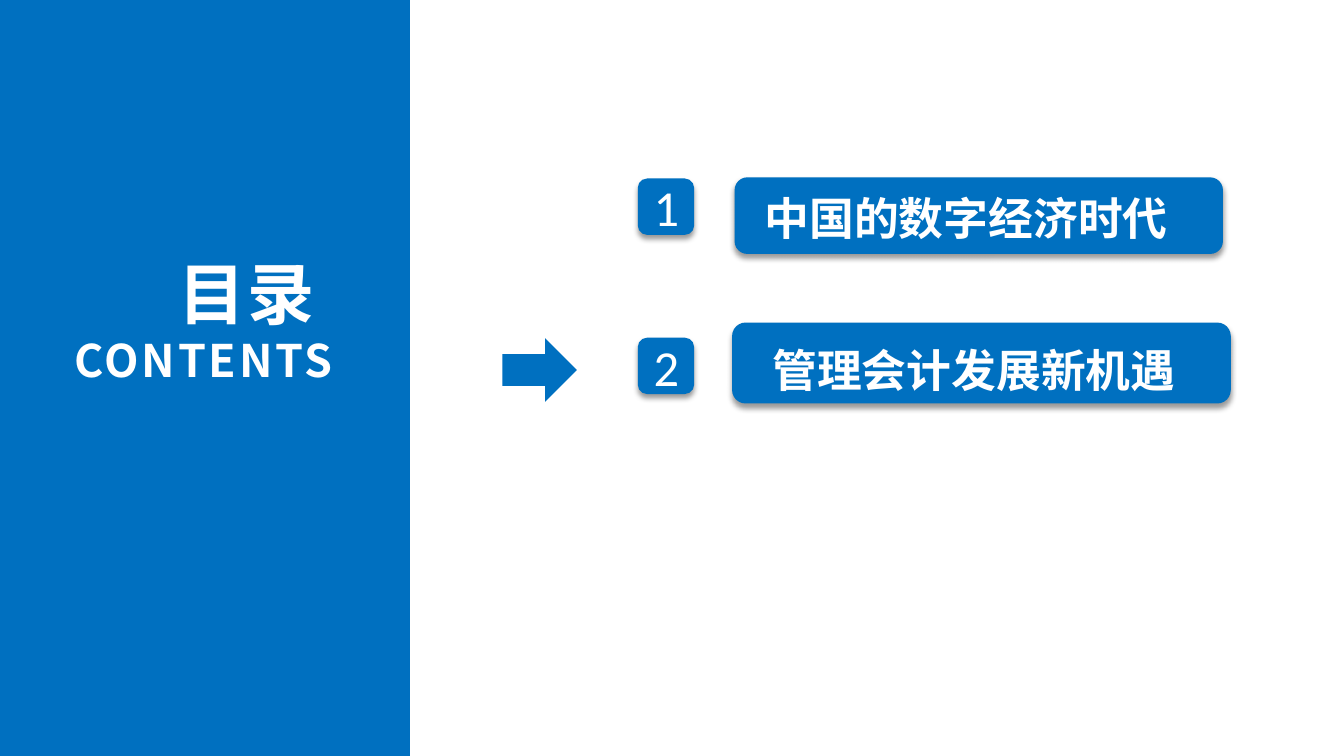
from lxml import etree
from pptx import Presentation
from pptx.dml.color import RGBColor
from pptx.enum.shapes import MSO_SHAPE as SHAPE
from pptx.enum.text import MSO_ANCHOR as ANCHOR, PP_ALIGN as ALIGN
from pptx.oxml import parse_xml
from pptx.oxml.ns import qn
from pptx.util import Pt

BLUE, WHITE = "0070C0", "FFFFFF"
LATIN, CJK = "Calibri", "Noto Sans CJK SC"
SHADOW = (
    '<a:effectLst xmlns:a="http://schemas.openxmlformats.org/drawingml/2006/main">'
    '<a:outerShdw blurRad="50800" dist="38100" dir="5400000" algn="t" rotWithShape="0">'
    '<a:srgbClr val="000000"><a:alpha val="40000"/></a:srgbClr>'
    '</a:outerShdw></a:effectLst>'
)


def color(value):
    """Turn a hex string into a colour."""
    return RGBColor.from_string(value)


def add_block(shapes, kind, box, shadow=False):
    """Add a blue borderless shape, optionally with a soft shadow."""
    sp = shapes.add_shape(kind, *map(Pt, box))
    sp.fill.solid()
    sp.fill.fore_color.rgb = color(BLUE)
    sp.line.fill.background()
    sp.shadow.inherit = False
    if shadow:
        props = sp._element.spPr
        props.replace(props.find(qn("a:effectLst")), parse_xml(SHADOW))
    return sp


def set_insets(tf):
    """Give a text frame its wrapping and margins."""
    tf.word_wrap = True
    tf.margin_left = tf.margin_right = Pt(9.4)
    tf.margin_top = tf.margin_bottom = Pt(5)


def add_run(p, text, size, font, bold=False, spacing=0):
    """Add one white run to a paragraph."""
    r = p.add_run()
    r.text = text
    r.font.size = Pt(size)
    r.font.bold = bold
    r.font.color.rgb = color(WHITE)
    r.font.name = font
    props = r.font._element
    etree.SubElement(props, qn("a:ea")).set("typeface", font)
    if spacing:
        props.set("spc", str(spacing * 100))


def add_sidebar(s, box):
    """Fill the left panel."""
    add_block(s.shapes, SHAPE.RECTANGLE, box)


def add_title(s, box):
    """Write the two-line heading, aligned right."""
    tf = s.shapes.add_textbox(*map(Pt, box)).text_frame
    set_insets(tf)
    for i, (text, size) in enumerate((("目录 ", 48), ("CONTENTS", 32))):
        p = tf.add_paragraph() if i else tf.paragraphs[0]
        p.alignment = ALIGN.RIGHT
        add_run(p, text, size, CJK, bold=True, spacing=2)


def add_badge(s, box, number):
    """Place a numbered square."""
    tf = add_block(s.shapes, SHAPE.ROUNDED_RECTANGLE, box, shadow=True).text_frame
    set_insets(tf)
    tf.vertical_anchor = ANCHOR.MIDDLE
    p = tf.paragraphs[0]
    p.alignment = ALIGN.CENTER
    add_run(p, str(number), 36, LATIN)


def add_label(s, box, text, drop):
    """Place a topic bar with its text dropped below the bar's top edge."""
    x, y, w, h = box
    group = s.shapes.add_group_shape()
    add_block(group.shapes, SHAPE.ROUNDED_RECTANGLE, box, shadow=True)
    tb = group.shapes.add_textbox(*map(Pt, (x + 12, y + drop, w - 20, 48)))
    set_insets(tb.text_frame)
    add_run(tb.text_frame.paragraphs[0], text, 32, CJK, bold=True)


def add_arrow(s, box):
    """Point at the current topic."""
    add_block(s.shapes, SHAPE.RIGHT_ARROW, box)


def main():
    """Build the contents slide."""
    prs = Presentation()
    prs.slide_width, prs.slide_height = Pt(960.5), Pt(540)
    s = prs.slides.add_slide(prs.slide_layouts[6])
    add_sidebar(s, (0, 0, 293, 540))
    topics = (
        ("中国的数字经济时代", 127.5, (525, 126.7, 349, 54.7), 4.3),
        (" 管理会计发展新机遇", 241.2, (523.2, 230.4, 356.4, 57.8), 9.3),
    )
    for number, (text, top, bar, drop) in enumerate(topics, 1):
        add_badge(s, (455.8, top, 40.3, 40.3), number)
        add_label(s, bar, text, drop)
    add_title(s, (26.6, 175, 221, 106.6))
    add_arrow(s, (359, 241.6, 53.3, 45.4))
    prs.save("out.pptx")


if __name__ == "__main__":
    main()
